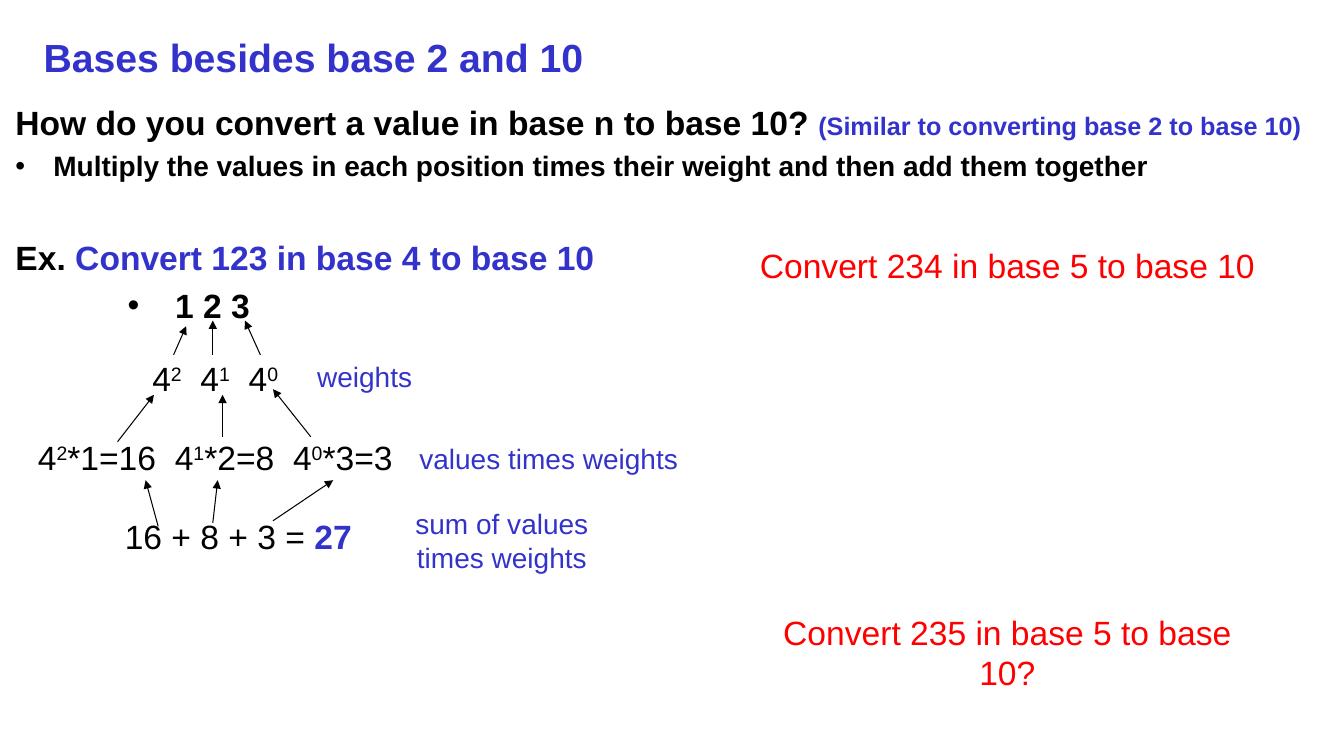
from pptx import Presentation
from pptx.dml.color import RGBColor
from pptx.enum.shapes import MSO_CONNECTOR
from pptx.enum.text import MSO_ANCHOR, PP_ALIGN
from pptx.oxml.ns import qn
from pptx.util import Pt
from lxml.etree import SubElement

INK = {"blue": "3333CC", "black": "000000", "red": "FF0000"}
FONT = "Arial"
ARROWS = [
    ((124, 253.5), (133, 233)),
    ((152, 253.5), (152, 229)),
    ((186, 253.5), (175, 229)),
    ((84, 315.5), (110, 282)),
    ((159, 312), (159, 282)),
    ((222, 312), (195, 278)),
    ((113, 376), (104, 343)),
    ((152, 373.5), (155.5, 343)),
    ((195, 372), (238, 343)),
]
NOTES = [
    ("weights", 219, 253.5, 83, 20, "blue"),
    ("values times weights", 291.5, 312, 201, 20, "blue"),
    ("sum of values times weights", 265, 358.5, 187, 20, "blue"),
    ("Convert 234 in base 5 to base 10", 529, 171.5, 381, 24, "red"),
    ("Convert 235 in base 5 to base 10?", 529, 433.5, 381, 24, "red"),
]


def add_box(slide, left, top, width, height, anchor=MSO_ANCHOR.TOP):
    shape = slide.shapes.add_textbox(Pt(left), Pt(top), Pt(width), Pt(height))
    frame = shape.text_frame
    frame.word_wrap = True
    frame.vertical_anchor = anchor
    return frame


def add_para(frame, first=False, before=0, align=PP_ALIGN.LEFT):
    para = frame.paragraphs[0] if first else frame.add_paragraph()
    para.alignment = align
    para.space_before = Pt(before)
    return para


def add_run(para, text, size=24, color="black", bold=False):
    run = para.add_run()
    run.text = text
    font = run.font
    font.name, font.size, font.bold = FONT, Pt(size), bold
    font.color.rgb = RGBColor.from_string(INK[color])
    return run


def set_left(para, margin, hang=0):
    props = para._p.get_or_add_pPr()
    props.set("marL", str(Pt(margin)))
    props.set("indent", str(Pt(-hang)))
    return props


def add_dot(para, margin, hang):
    props = set_left(para, margin, hang)
    SubElement(props, qn("a:buFont")).set("typeface", FONT)
    SubElement(props, qn("a:buChar")).set("char", "•")


def add_terms(para, tails):
    for power, tail in zip((2, 1, 0), tails):
        if power < 2:
            gap = add_run(para, " ")
            gap.font._element.set("spc", "667")
        add_run(para, "4")
        raised = add_run(para, str(power))
        raised.font._element.set("baseline", "30000")
        if tail:
            add_run(para, tail)


def add_arrow(slide, start, end):
    line = slide.shapes.add_connector(
        MSO_CONNECTOR.STRAIGHT, *map(Pt, start + end))
    line.line.width = Pt(0.75)
    line.line.color.rgb = RGBColor.from_string(INK["black"])
    SubElement(line.line._get_or_add_ln(), qn("a:tailEnd")).set("type", "triangle")
    SubElement(line._element.spPr, qn("a:effectLst"))


def add_note(slide, text, left, top, width, size, color):
    frame = add_box(slide, left, top, width, size * 1.5)
    para = add_para(frame, True, align=PP_ALIGN.CENTER)
    add_run(para, text, size, color)


def add_title(slide):
    frame = add_box(slide, 24, 19.5, 912, 42, MSO_ANCHOR.MIDDLE)
    add_run(add_para(frame, True), "Bases besides base 2 and 10", 28, "blue", True)


def add_body(slide):
    frame = add_box(slide, 4, 69.5, 944, 174)
    ask = add_para(frame, True)
    add_run(ask, "How do you convert a value in base n to base 10? ", bold=True)
    add_run(ask, "(Similar to converting base 2 to base 10)", 18, "blue", True)
    rule = add_para(frame, before=4.6)
    add_dot(rule, 27, 27)
    add_run(rule, "Multiply the values in each position times their weight "
            "and then add them together", 20, bold=True)
    case = add_para(frame, before=38.6)
    add_run(case, "Ex. ", bold=True)
    add_run(case, "Convert 123 in base 4 to base 10", 24, "blue", True)
    digits = add_para(frame, before=5.5)
    add_dot(digits, 114, 34)
    add_run(digits, "1 2 3", bold=True)


def add_sums(slide):
    frame = add_box(slide, 16.5, 252, 274.5, 181.5)
    mid = PP_ALIGN.CENTER
    add_terms(add_para(frame, True, align=mid), ("", "", ""))
    add_terms(add_para(frame, before=27.6, align=mid), ("*1=16", "*2=8", "*3=3"))
    total = add_para(frame, before=27.6, align=mid)
    set_left(total, 33)
    add_run(total, "16 + 8 + 3 = ")
    add_run(total, "27", 24, "blue", True)


def main():
    deck = Presentation()
    deck.slide_width, deck.slide_height = Pt(960), Pt(540)
    slide = deck.slides.add_slide(deck.slide_layouts[6])
    add_title(slide)
    add_body(slide)
    add_sums(slide)
    for start, end in ARROWS:
        add_arrow(slide, start, end)
    for note in NOTES:
        add_note(slide, *note)
    deck.save("out.pptx")


if __name__ == "__main__":
    main()
